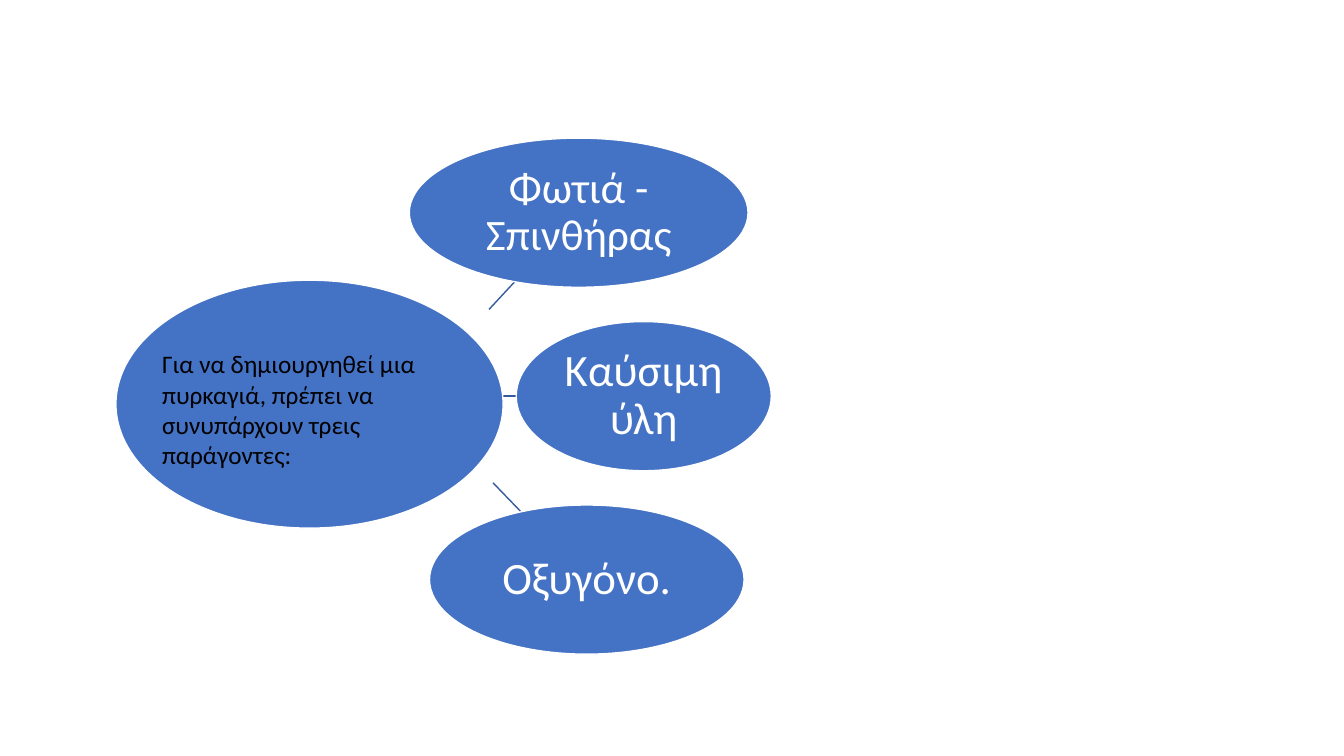
from pptx import Presentation
from pptx.dml.color import RGBColor
from pptx.enum.shapes import MSO_CONNECTOR, MSO_SHAPE
from pptx.enum.text import MSO_ANCHOR, PP_ALIGN
from pptx.oxml.ns import qn
from pptx.util import Pt
from lxml import etree

PX = 9144  # 100 px to the inch
FONT = "Calibri"
BLUE = RGBColor(0x44, 0x72, 0xC4)
DARK_BLUE = RGBColor(0x36, 0x5B, 0x9D)
WHITE = RGBColor(0xFF, 0xFF, 0xFF)
BLACK = RGBColor(0x00, 0x00, 0x00)

CAUSE = "Για να δημιουργηθεί μια πυρκαγιά, πρέπει να συνυπάρχουν τρεις παράγοντες:"
FACTOR_HEIGHT = 148
FACTOR_PITCH = 182
# Wording, left, width, text size
FACTORS = [
    ("Φωτιά - Σπινθήρας", 291, 336, 31),
    ("Καύσιμη ύλη", 397, 253, 32),
    ("Οξυγόνο.", 311, 312, 32),
]
# Start and end of each spoke
SPOKES = [(370, 170, 396, 142), (376, 256, 397, 256), (374, 342, 402, 371)]


def add_text(frame, wording, size, color):
    frame.word_wrap = True
    para = frame.paragraphs[0]
    span = para.add_run()
    span.text = wording
    span.font.name = FONT
    span.font.size = Pt(size)
    span.font.color.rgb = color
    return para


def add_ellipse(page, left, top, width, height):
    ellipse = page.shapes.add_shape(
        MSO_SHAPE.OVAL, left * PX, top * PX, width * PX, height * PX)
    ellipse.shadow.inherit = False
    ellipse.fill.solid()
    ellipse.fill.fore_color.rgb = BLUE
    ellipse.line.color.rgb = WHITE
    ellipse.line.width = Pt(1)
    return ellipse


def add_spoke(page, x1, y1, x2, y2):
    spoke = page.shapes.add_connector(
        MSO_CONNECTOR.STRAIGHT, x1 * PX, y1 * PX, x2 * PX, y2 * PX)
    spoke.line.color.rgb = DARK_BLUE
    spoke.line.width = Pt(1)
    etree.SubElement(spoke._element.spPr, qn("a:effectLst"))


def add_factor(page, left, top, width, wording, size):
    frame = add_ellipse(page, left, top, width, FACTOR_HEIGHT).text_frame
    frame.vertical_anchor = MSO_ANCHOR.MIDDLE
    frame.margin_left = frame.margin_right = 2 * PX
    frame.margin_top = frame.margin_bottom = 2 * PX
    para = add_text(frame, wording, size, WHITE)
    para.alignment = PP_ALIGN.CENTER
    para.line_spacing = 0.9


def add_fire_diagram(page, left, top):
    # Spokes from the hub to the factors
    for x1, y1, x2, y2 in SPOKES:
        add_spoke(page, left + x1, top + y1, left + x2, top + y2)

    # Hub
    add_ellipse(page, left, top + 141, 384, 246)

    # Factors, evenly spaced downwards
    for row, (wording, offset, width, size) in enumerate(FACTORS):
        add_factor(page, left + offset, top + row * FACTOR_PITCH, width, wording, size)

    # Hub wording
    box = page.shapes.add_textbox(
        (left + 36) * PX, (top + 204) * PX, 343 * PX, 131 * PX)
    add_text(box.text_frame, CAUSE, 18, BLACK)


def main():
    deck = Presentation()
    deck.slide_width = 1333 * PX
    deck.slide_height = 750 * PX
    page = deck.slides.add_slide(deck.slide_layouts[6])
    add_fire_diagram(page, 115, 137)
    deck.save("out.pptx")


if __name__ == "__main__":
    main()
